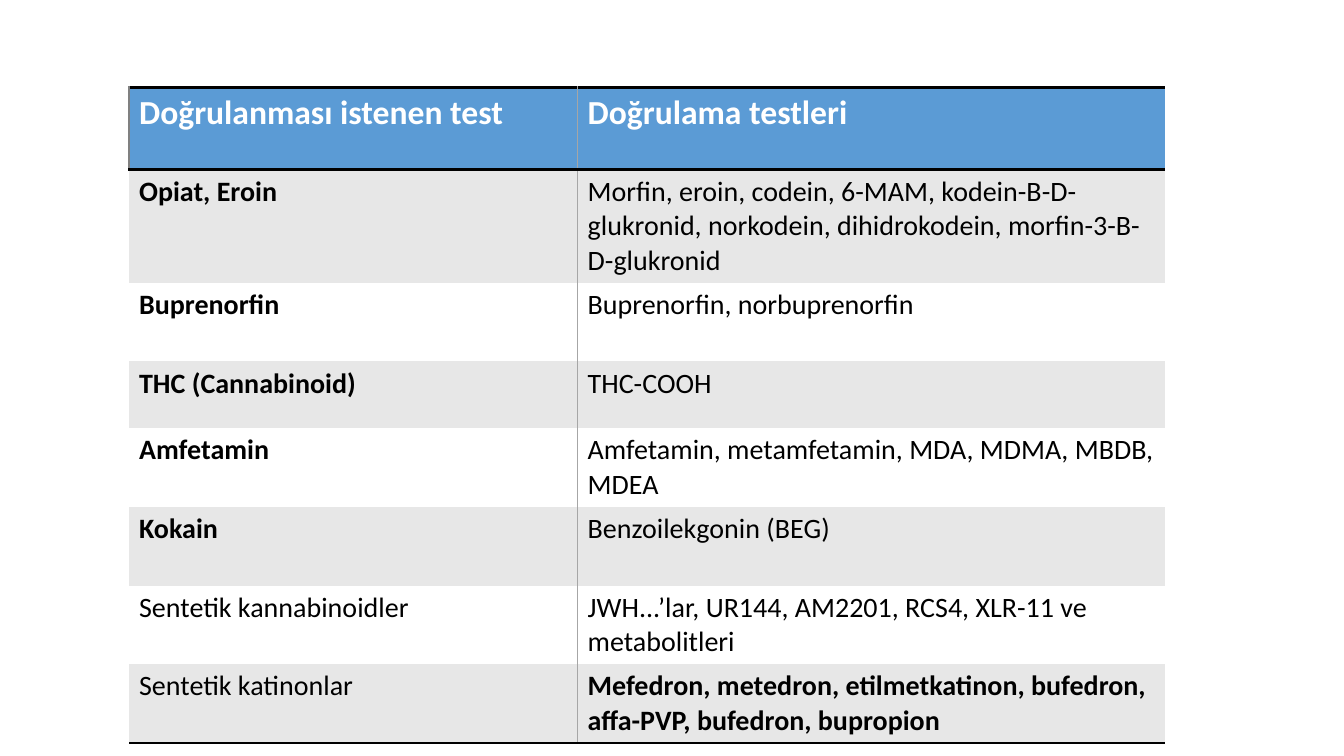
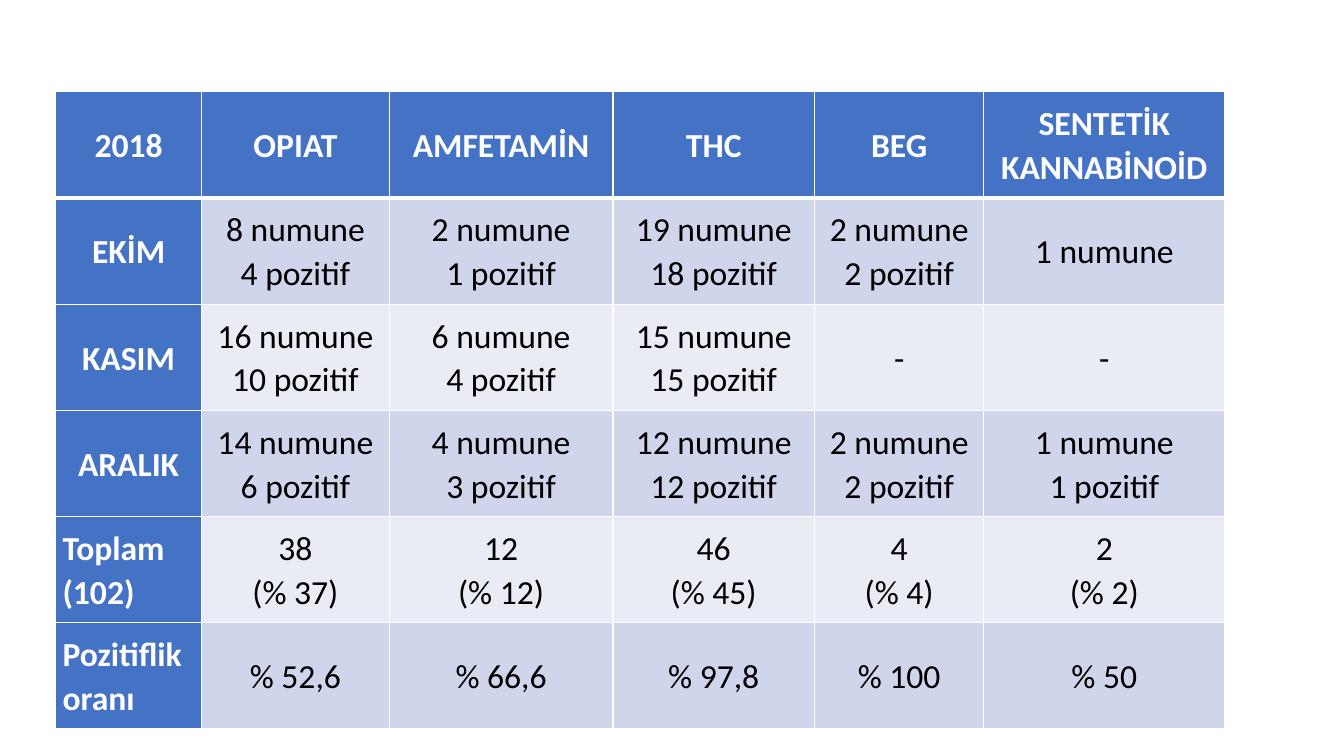
from lxml.etree import SubElement
from pptx import Presentation
from pptx.dml.color import RGBColor
from pptx.enum.text import MSO_ANCHOR, PP_ALIGN
from pptx.oxml.ns import qn
from pptx.util import Inches, Pt

HUES = {
    "white": "FFFFFF", "black": "000000", "grey": "A6A6A6", "edge": "808080",
    "sky": "5B9BD5", "ash": "E7E7E7",
    "blue": "4472C4", "mist": "CFD5EA", "pale": "E9EBF5",
}
FONT = "Calibri"

# Confirmation tests asked for, and what each one covers
TESTS = [
    ["Doğrulanması istenen test", "Doğrulama testleri"],
    ["Opiat, Eroin", "Morfin, eroin, codein, 6-MAM, kodein-B-D-glukronid, "
     "norkodein, dihidrokodein, morfin-3-B-D-glukronid"],
    ["Buprenorfin", "Buprenorfin, norbuprenorfin"],
    ["THC (Cannabinoid)", "THC-COOH"],
    ["Amfetamin", "Amfetamin, metamfetamin, MDA, MDMA, MBDB, MDEA"],
    ["Kokain", "Benzoilekgonin (BEG)"],
    ["Sentetik kannabinoidler",
     "JWH...’lar, UR144, AM2201, RCS4, XLR-11 ve metabolitleri"],
    ["Sentetik katinonlar", "Mefedron, metedron, etilmetkatinon, bufedron, "
     "affa-PVP, bufedron, bupropion"],
]

# Samples and positives by month
COUNTS = [
    ["2018", "OPIAT", "AMFETAMİN", "THC", "BEG", "SENTETİK KANNABİNOİD"],
    ["EKİM", "8 numune\n4 pozitif", "2 numune\n1 pozitif",
     "19 numune\n18 pozitif", "2 numune\n2 pozitif", "1 numune"],
    ["KASIM", "16 numune\n10 pozitif", "6 numune\n4 pozitif",
     "15 numune\n15 pozitif", "-", "-"],
    ["ARALIK", "14 numune\n6 pozitif", "4 numune\n3 pozitif",
     "12 numune\n12 pozitif", "2 numune\n2 pozitif", "1 numune\n1 pozitif"],
    ["Toplam\n(102)", "38\n(% 37)", "12\n(% 12)", "46\n(% 45)", "4\n(% 4)",
     "2\n(% 2)"],
    ["Pozitiflik oranı", "% 52,6", "% 66,6", "% 97,8", "% 100", "% 50"],
]


def write(frame, text, size=24, hue="black", bold=False, align=PP_ALIGN.LEFT,
          space=1.0):
    """Fill a text frame, one paragraph for each line of text."""
    frame.text = text
    for para in frame.paragraphs:
        para.alignment = align
        para.line_spacing = space
        font = para.runs[0].font
        font.name, font.size, font.bold = FONT, Pt(size), bold
        font.color.rgb = RGBColor.from_string(HUES[hue])


class Deck:
    """Holds the style and the current slide; lengths are percent of it."""

    def __init__(self):
        self.file = Presentation()
        self.file.slide_width = Inches(13.33)
        self.file.slide_height = Inches(7.5)
        self.slide = None

    def x(self, share):
        return round(self.file.slide_width * share / 100)

    def y(self, share):
        return round(self.file.slide_height * share / 100)

    def page(self):
        self.slide = self.file.slides.add_slide(self.file.slide_layouts[6])

    def grid(self, left, top, cols, rows, data, style):
        """Add a table; style(row, col) gives the look of each cell."""
        frame = self.slide.shapes.add_table(
            len(rows), len(cols), self.x(left), self.y(top),
            self.x(sum(cols)), self.y(sum(rows)))
        table = frame.table
        table.first_row = table.horz_banding = False
        for col, width in zip(table.columns, cols):
            col.width = self.x(width)
        for row, height in zip(table.rows, rows):
            row.height = self.y(height)
        for r, line in enumerate(data):
            for c, text in enumerate(line):
                self.cell(table.cell(r, c), text, **style(r, c))

    def cell(self, cell, text, fill, lines, inset=None,
             anchor=MSO_ANCHOR.TOP, **form):
        cell.fill.solid()
        cell.fill.fore_color.rgb = RGBColor.from_string(HUES[fill])
        cell.vertical_anchor = anchor
        if inset is not None:
            cell.margin_left = cell.margin_right = Inches(inset)
            cell.margin_top = cell.margin_bottom = 0
        write(cell.text_frame, text, **form)
        self.edges(cell, lines)

    def edges(self, cell, lines):
        """Draw the listed sides of a cell and clear the others."""
        props = cell._tc.get_or_add_tcPr()
        for spot, side in enumerate("LRTB"):
            line = SubElement(props, qn(f"a:ln{side}"))
            props.insert(spot, line)
            if side in lines:
                hue, width = lines[side]
                line.set("w", str(Pt(width)))
                paint = SubElement(line, qn("a:solidFill"))
                SubElement(paint, qn("a:srgbClr"), val=HUES[hue])
            else:
                SubElement(line, qn("a:noFill"))


def test_look(row, col):
    last = len(TESTS) - 1
    lines = {"L" if col else "R": ("grey", 1)}
    if row == 0:
        lines["T"] = ("black", 2)
        if col == 0:
            lines["L"] = ("edge", 1)
    if row in (0, last):
        lines["B"] = ("black", 2)
    if row == 1:
        lines["T"] = ("black", 2)
    if row == 0:
        return dict(fill="sky", lines=lines, hue="white", bold=True)
    bold = row == last if col else row < 6
    return dict(fill="ash" if row % 2 else "white", lines=lines, size=20,
                bold=bold)


def count_look(row, col):
    lines = {side: ("white", 1) for side in "LRTB"}
    if row < 2:
        lines["T" if row else "B"] = ("white", 3)
    head = row == 0 or col == 0
    fill = "blue" if head else "mist" if row % 2 else "pale"
    left = col == 0 and row > 3
    return dict(fill=fill, lines=lines, inset=0.07, anchor=MSO_ANCHOR.MIDDLE,
                hue="white" if head else "black", bold=head, space=1.07,
                align=PP_ALIGN.LEFT if left else PP_ALIGN.CENTER)


def main():
    deck = Deck()

    # Confirmation tests
    deck.page()
    deck.grid(9.6, 11.6, [33.38, 43.73],
              [10.85, 14.95, 10.4, 8.86] + [10.4] * 4, TESTS, test_look)

    # Monthly counts
    deck.page()
    deck.grid(4.13, 12.13, [10.88, 13.95, 16.65, 15, 12.6, 17.93],
              [14.05] * 6, COUNTS, count_look)

    deck.file.save("out.pptx")


if __name__ == "__main__":
    main()
